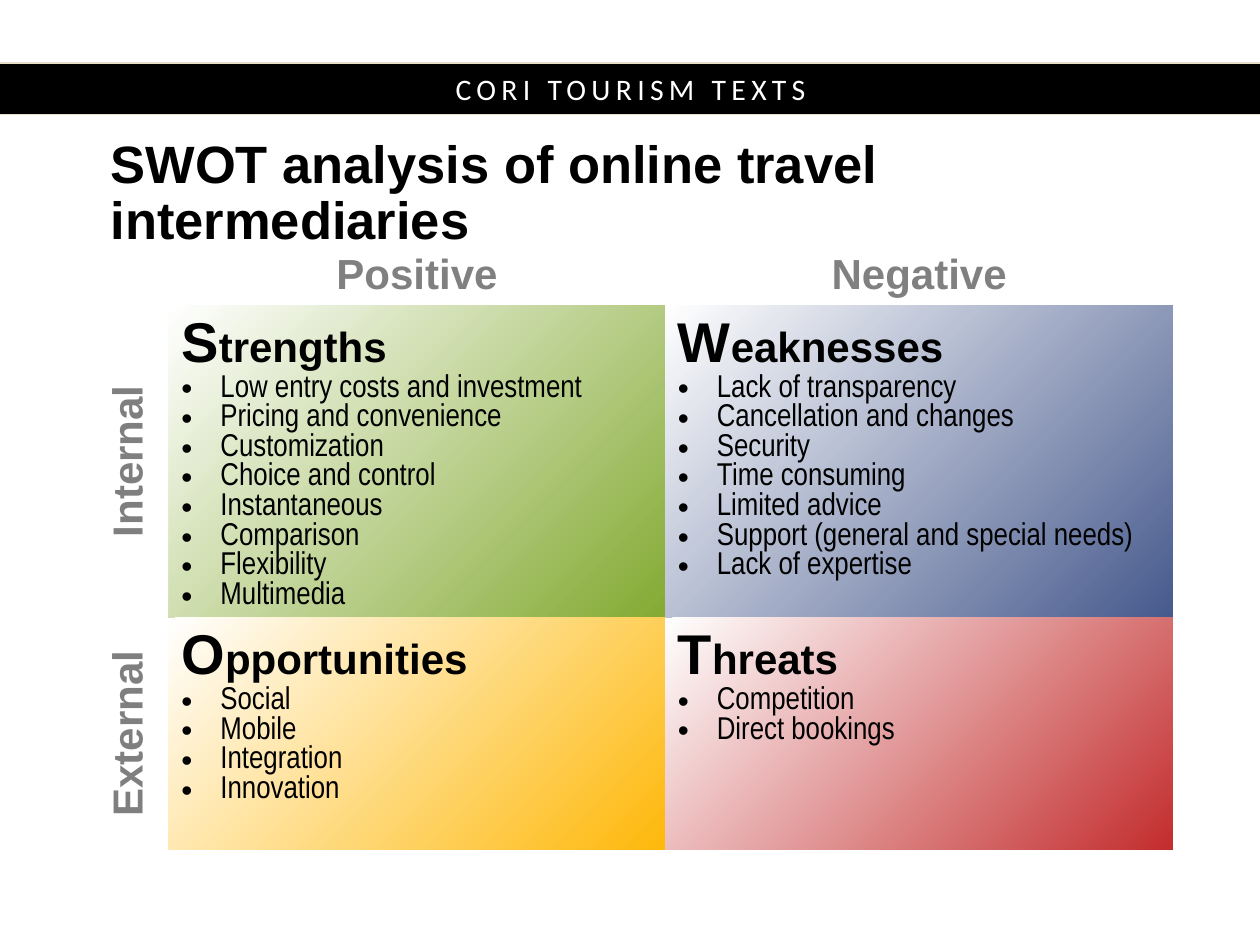
from pptx import Presentation
from pptx.dml.color import RGBColor as RGB
from pptx.enum.shapes import MSO_SHAPE as Shape
from pptx.enum.text import MSO_ANCHOR as Anchor, PP_ALIGN as Align
from pptx.oxml import parse_xml
from pptx.oxml.ns import nsdecls, qn
from pptx.util import Inches, Pt

BANNER = "CORI TOURISM TEXTS"
TITLE = "SWOT analysis of online travel intermediaries"
HEADS = ["Positive", "Negative"]
SIDES = ["Internal", "External"]
QUADS = [
    [
        ("Strengths", "84AA33", [
            "Low entry costs and investment", "Pricing and convenience",
            "Customization", "Choice and control", "Instantaneous",
            "Comparison", "Flexibility", "Multimedia"]),
        ("Weaknesses", "475A8D", [
            "Lack of transparency", "Cancellation and changes", "Security",
            "Time consuming", "Limited advice",
            "Support (general and special needs)", "Lack of expertise"]),
    ],
    [
        ("Opportunities", "FEB80A", [
            "Social", "Mobile", "Integration", "Innovation"]),
        ("Threats", "C32D2E", ["Competition", "Direct bookings"]),
    ],
]
COLS = [0.56, 3.94, 4.03]
ROWS = [0.43, 2.1, 1.84]
THEME = {
    "black": "000000", "white": "FFFFFF", "edge": "E7DEC9",
    "head": "808080", "side": "7F7F7F",
    "main": "Arial", "list": "Arial Narrow", "band": "Calibri",
    "title": 30, "cap": 32, "label": 24, "item": 18, "banner": 17,
}
PLAIN = "{2D5ABB26-0587-4C30-8999-92F81FD0307C}"


def style(font, size, color="black", face="main", bold=True):
    """Set the look of a font from theme keys."""
    font.name = THEME[face]
    font.size = Pt(THEME[size])
    font.bold = bold
    font.color.rgb = RGB.from_string(THEME[color])


def add_banner(slide):
    """Draw the black band with its spaced caption."""
    band = slide.shapes.add_shape(
        Shape.RECTANGLE, Inches(-0.08), Inches(0.5), Inches(10.17), Inches(0.41))
    band.shadow.inherit = False
    band.fill.solid()
    band.fill.fore_color.rgb = RGB.from_string(THEME["black"])
    band.line.color.rgb = RGB.from_string(THEME["edge"])
    band.line.width = Pt(0.75)
    band.text_frame.vertical_anchor = Anchor.MIDDLE
    para = band.text_frame.paragraphs[0]
    para.alignment = Align.CENTER
    run = para.add_run()
    run.text = BANNER
    run._r.get_or_add_rPr().set("spc", "300")
    style(para.font, "banner", "white", "band", False)


def add_title(slide):
    """Place the slide title."""
    box = slide.shapes.add_textbox(
        Inches(0.78), Inches(1.25), Inches(8.88), Inches(0.58))
    frame = box.text_frame
    frame.word_wrap = True
    frame.vertical_anchor = Anchor.MIDDLE
    para = frame.paragraphs[0]
    para.text = TITLE
    para.line_spacing = Pt(32)
    style(para.font, "title")


def set_label(cell, text, color):
    """Write a centred grey label in a cell."""
    para = cell.text_frame.paragraphs[0]
    para.text = text
    para.alignment = Align.CENTER
    style(para.font, "label", color)


def set_quad(cell, name, color, items):
    """Fill a quadrant with its gradient, heading and bullets."""
    cell._tc.get_or_add_tcPr().append(parse_xml(
        f'<a:gradFill {nsdecls("a")} rotWithShape="1"><a:gsLst>'
        f'<a:gs pos="0"><a:srgbClr val="{color}"/></a:gs>'
        f'<a:gs pos="100000"><a:srgbClr val="{THEME["white"]}"/></a:gs>'
        '</a:gsLst><a:path path="circle">'
        '<a:fillToRect l="100000" t="100000"/></a:path></a:gradFill>'))
    frame = cell.text_frame
    for part, size in ((name[0], "cap"), (name[1:], "label")):
        run = frame.paragraphs[0].add_run()
        run.text = part
        style(run.font, size)
    for item in items:
        para = frame.add_paragraph()
        para.text = item
        props = para._p.get_or_add_pPr()
        props.set("marL", str(Inches(0.31)))
        props.set("indent", str(Inches(-0.31)))
        props.append(parse_xml(f'<a:buFont {nsdecls("a")} typeface="Arial"/>'))
        props.append(parse_xml(f'<a:buChar {nsdecls("a")} char="•"/>'))
        style(para.font, "item", face="list", bold=False)


def add_grid(slide):
    """Build the table of four quadrants with its labels."""
    table = slide.shapes.add_table(
        len(ROWS), len(COLS), Inches(0.78), Inches(1.95),
        Inches(sum(COLS)), Inches(sum(ROWS))).table
    table.first_row = table.horz_banding = False
    table._tbl.tblPr.find(qn("a:tableStyleId")).text = PLAIN
    for col, width in zip(table.columns, COLS):
        col.width = Inches(width)
    for row, height in zip(table.rows, ROWS):
        row.height = Inches(height)
    table.cell(0, 0).fill.background()
    for c, text in enumerate(HEADS, 1):
        table.cell(0, c).fill.background()
        set_label(table.cell(0, c), text, "head")
    for r, (text, quads) in enumerate(zip(SIDES, QUADS), 1):
        side = table.cell(r, 0)
        side.fill.background()
        side._tc.get_or_add_tcPr().set("vert", "vert270")
        set_label(side, text, "side")
        for c, quad in enumerate(quads, 1):
            set_quad(table.cell(r, c), *quad)


def main():
    """Build and save the slide."""
    deck = Presentation()
    deck.slide_width, deck.slide_height = Inches(10), Inches(7.5)
    slide = deck.slides.add_slide(deck.slide_layouts[6])
    add_banner(slide)
    add_grid(slide)
    add_title(slide)
    deck.save("out.pptx")


if __name__ == "__main__":
    main()
